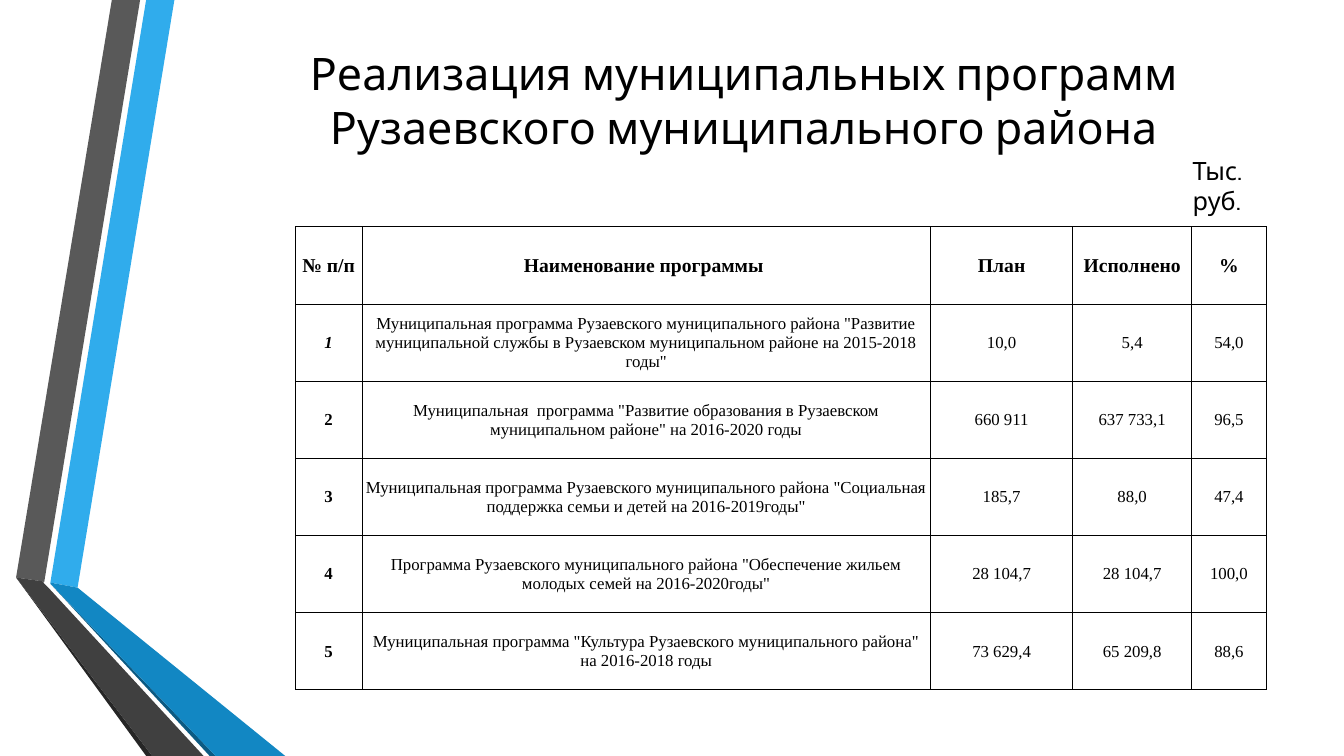
import copy
import dataclasses
import typing

import lxml.etree
import pptx
import pptx.dml.color
import pptx.enum.text
import pptx.oxml.ns
import pptx.util

Inches = pptx.util.Inches
Align = pptx.enum.text.PP_ALIGN
Anchor = pptx.enum.text.MSO_ANCHOR


@dataclasses.dataclass(frozen=True)
class Theme:
    ink: str = "000000"
    blue: str = "30ACEC"
    blue_mid: str = "1287C3"
    blue_dark: str = "0C5A82"
    grey: str = "595959"
    grey_mid: str = "404040"
    grey_dark: str = "262626"
    heading_font: str = "Cabin"
    table_font: str = "Times New Roman"
    title_size: int = 32
    unit_size: int = 18
    header_size: int = 14
    body_size: int = 12
    border_width: float = 0.5


@dataclasses.dataclass(frozen=True)
class Ribbon:
    """Outline points are in hundredths of an inch."""
    color: str
    points: tuple[tuple[int, int], ...]


class Program(typing.NamedTuple):
    number: str
    name: str
    plan: str
    done: str
    percent: str


THEME = Theme()
SLIDE_WIDTH, SLIDE_HEIGHT = 13.33, 7.5
TABLE_LEFT, TABLE_TOP = 2.93, 2.25
COLUMNS = (0.66, 5.64, 1.41, 1.18, 0.74)
ROW_HEIGHT = 0.765

RIBBONS = (
    Ribbon(THEME.blue, ((50, 578), (77, 583), (173, 0), (145, 0))),
    Ribbon(THEME.grey, ((139, 0), (111, 0), (16, 573), (44, 577))),
    Ribbon(THEME.grey_dark, ((16, 573), (145, 750), (151, 750))),
    Ribbon(THEME.blue_dark, ((50, 579), (208, 750), (214, 750))),
    Ribbon(THEME.blue_mid, ((50, 579), (214, 750), (283, 750), (77, 583), (50, 578))),
    Ribbon(THEME.grey_mid, ((202, 750), (48, 583), (43, 578), (44, 577),
                            (16, 573), (151, 750))),
)

HEADER = Program("№ п/п", "Наименование программы ", "План", "Исполнено", "%")
PROGRAMS = (
    Program("1", 'Муниципальная программа Рузаевского муниципального района "Развитие '
            'муниципальной службы в Рузаевском муниципальном районе на 2015-2018 годы"',
            "10,0", "5,4", "54,0"),
    Program("2", 'Муниципальная  программа "Развитие образования в Рузаевском '
            'муниципальном районе" на 2016-2020 годы',
            "660 911", "637 733,1", "96,5"),
    Program("3", 'Муниципальная программа Рузаевского муниципального района "Социальная '
            'поддержка семьи и детей на 2016-2019годы"',
            "185,7", "88,0", "47,4"),
    Program("4", 'Программа Рузаевского муниципального района "Обеспечение жильем '
            'молодых семей на 2016-2020годы"',
            "28 104,7", "28 104,7", "100,0"),
    Program("5", 'Муниципальная программа "Культура Рузаевского муниципального района" '
            'на 2016-2018 годы',
            "73 629,4", "65 209,8", "88,6"),
)


def write(frame, text: str, *, font: str, size: float, align=Align.CENTER,
          bold: bool = False, italic: bool = False) -> None:
    """Fill the first paragraph; a newline becomes a line break of the same format."""
    para = frame.paragraphs[0]
    para.text = text
    para.alignment = align
    for span in para.runs:
        span.font.name = font
        span.font.size = pptx.util.Pt(size)
        span.font.bold = bold
        span.font.italic = italic
        span.font.color.rgb = pptx.dml.color.RGBColor.from_string(THEME.ink)
    for line_break in para._p.findall(pptx.oxml.ns.qn("a:br")):
        line_break.append(copy.deepcopy(para.runs[0]._r.rPr))


def draw_ribbon(slide, ribbon: Ribbon) -> None:
    start, *rest = ribbon.points
    builder = slide.shapes.build_freeform(*start, scale=Inches(0.01))
    builder.add_line_segments(rest, close=True)
    shape = builder.convert_to_shape()
    shape.shadow.inherit = False
    shape.fill.solid()
    shape.fill.fore_color.rgb = pptx.dml.color.RGBColor.from_string(ribbon.color)
    shape.line.fill.background()


def draw_borders(cell) -> None:
    properties = cell._tc.get_or_add_tcPr()
    qn = pptx.oxml.ns.qn
    for side in ("a:lnL", "a:lnR", "a:lnT", "a:lnB"):
        line = lxml.etree.SubElement(properties, qn(side),
                                     w=str(pptx.util.Pt(THEME.border_width)))
        fill = lxml.etree.SubElement(line, qn("a:solidFill"))
        lxml.etree.SubElement(fill, qn("a:srgbClr"), val=THEME.ink)


def draw_title(slide) -> None:
    title = slide.shapes.title
    title.left, title.top = Inches(1.95), Inches(0.33)
    title.width, title.height = Inches(10.96), Inches(1.32)
    frame = title.text_frame
    frame.auto_size = pptx.enum.text.MSO_AUTO_SIZE.NONE
    frame.vertical_anchor = Anchor.MIDDLE
    write(frame, "Реализация муниципальных программ \nРузаевского муниципального района ",
          font=THEME.heading_font, size=THEME.title_size)


def draw_unit(slide) -> None:
    box = slide.shapes.add_textbox(Inches(11.73), Inches(1.49), Inches(1.17), Inches(0.4))
    box.text_frame.word_wrap = True
    write(box.text_frame, "Тыс. руб.", font=THEME.heading_font,
          size=THEME.unit_size, align=Align.LEFT)


def draw_table(slide) -> None:
    rows = (HEADER, *PROGRAMS)
    table = slide.shapes.add_table(
        len(rows), len(COLUMNS), Inches(TABLE_LEFT), Inches(TABLE_TOP),
        Inches(sum(COLUMNS)), Inches(ROW_HEIGHT * len(rows))).table
    table.first_row = table.horz_banding = False
    for column, width in zip(table.columns, COLUMNS):
        column.width = Inches(width)
    for row_index, program in enumerate(rows):
        table.rows[row_index].height = Inches(ROW_HEIGHT)
        is_header = program is HEADER
        for column_index, text in enumerate(program):
            cell = table.cell(row_index, column_index)
            draw_borders(cell)
            cell.fill.background()
            cell.margin_left = cell.margin_right = cell.margin_top = Inches(0.01)
            cell.margin_bottom = 0
            cell.vertical_anchor = Anchor.MIDDLE
            write(cell.text_frame, text, font=THEME.table_font,
                  size=THEME.header_size if is_header else THEME.body_size,
                  bold=is_header or column_index == 0,
                  italic=row_index == 1 and column_index == 0)


def main() -> None:
    deck = pptx.Presentation()
    deck.slide_width, deck.slide_height = Inches(SLIDE_WIDTH), Inches(SLIDE_HEIGHT)
    slide = deck.slides.add_slide(deck.slide_layouts.get_by_name("Title Only"))
    for ribbon in RIBBONS:
        draw_ribbon(slide, ribbon)
    draw_title(slide)
    draw_unit(slide)
    draw_table(slide)
    deck.save("out.pptx")


if __name__ == "__main__":
    main()
